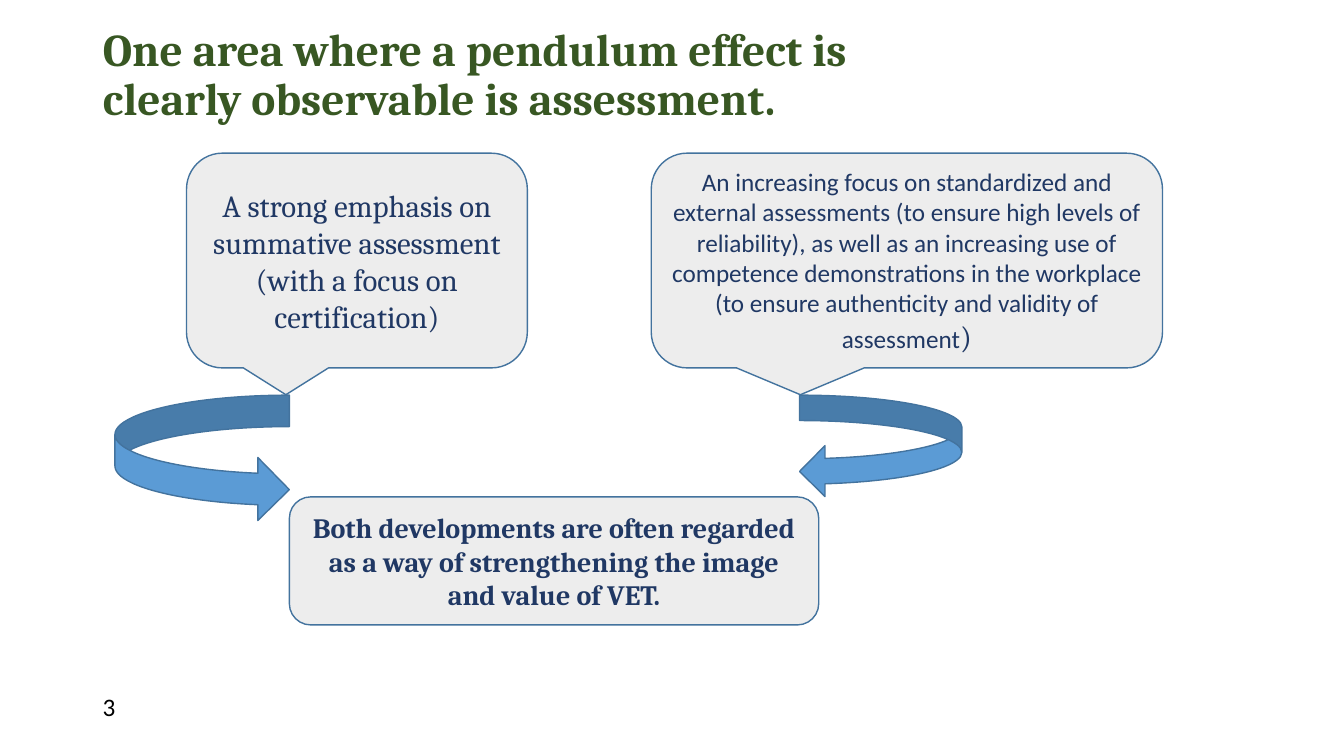
from dataclasses import dataclass

from pptx import Presentation
from pptx.dml.color import RGBColor
from pptx.enum.shapes import MSO_SHAPE
from pptx.enum.text import MSO_ANCHOR, MSO_AUTO_SIZE, PP_ALIGN
from pptx.util import Inches, Pt


@dataclass(frozen=True)
class Theme:
    heading_font: str = "Cambria"
    body_font: str = "Calibri"
    title_color: str = "385723"
    text_color: str = "203864"
    number_color: str = "000000"
    panel_fill: str = "EDEDED"
    arrow_fill: str = "5B9BD5"
    outline: str = "43739E"
    outline_width: float = 1
    title_size: float = 32.4
    large_size: float = 22
    conclusion_size: float = 20
    body_size: float = 18


THEME = Theme()


def add_run(paragraph, text, font_name, size, color, bold=False):
    run = paragraph.add_run()
    run.text = text
    run.font.name = font_name
    run.font.size = Pt(size)
    run.font.bold = bold
    run.font.color.rgb = RGBColor.from_string(color)


def place(shape, left, top, width, height):
    shape.left, shape.top = Inches(left), Inches(top)
    shape.width, shape.height = Inches(width), Inches(height)


def add_title(slide, lines):
    title = slide.shapes.title
    place(title, 0.92, 0.31, 11.5, 0.9)
    frame = title.text_frame
    frame.word_wrap = True
    frame.auto_size = MSO_AUTO_SIZE.NONE
    frame.vertical_anchor = MSO_ANCHOR.MIDDLE
    paragraph = frame.paragraphs[0]
    paragraph.alignment = PP_ALIGN.LEFT
    paragraph.line_spacing = 0.9
    for index, line in enumerate(lines):
        if index:
            paragraph.add_line_break()
        add_run(paragraph, line, THEME.heading_font, THEME.title_size,
                THEME.title_color, bold=True)


def add_outlined(slide, preset, box, fill):
    shape = slide.shapes.add_shape(preset, *map(Inches, box))
    shape.shadow.inherit = False
    shape.fill.solid()
    shape.fill.fore_color.rgb = RGBColor.from_string(fill)
    shape.line.color.rgb = RGBColor.from_string(THEME.outline)
    shape.line.width = Pt(THEME.outline_width)
    return shape


def add_panel(slide, preset, box, runs, bold=False):
    panel = add_outlined(slide, preset, box, THEME.panel_fill)
    frame = panel.text_frame
    frame.word_wrap = True
    frame.vertical_anchor = MSO_ANCHOR.MIDDLE
    paragraph = frame.paragraphs[0]
    paragraph.alignment = PP_ALIGN.CENTER
    for text, font_name, size in runs:
        add_run(paragraph, text, font_name, size, THEME.text_color, bold)


def add_page_number(slide, number):
    page_number = slide.shapes.add_textbox(
        Inches(0.92), Inches(6.81), Inches(0.5), Inches(0.4))
    page_number.text_frame.word_wrap = True
    add_run(page_number.text_frame.paragraphs[0], number,
            THEME.body_font, THEME.body_size, THEME.number_color)


def main():
    presentation = Presentation()
    presentation.slide_width = Inches(13.33)
    presentation.slide_height = Inches(7.5)
    slide = presentation.slides.add_slide(presentation.slide_layouts[5])

    add_title(slide, ["One area where a pendulum effect is",
                      "clearly observable is assessment."])

    # The two developments
    callout = MSO_SHAPE.ROUNDED_RECTANGULAR_CALLOUT
    add_panel(slide, callout, (1.85, 1.52, 3.38, 2.13), [
        ("A strong emphasis on summative assessment (with a focus on "
         "certification)", THEME.heading_font, THEME.large_size)])
    add_panel(slide, callout, (6.46, 1.52, 5.07, 2.13), [
        ("An increasing focus on standardized and external assessments "
         "(to ensure high levels of reliability), as well as an increasing "
         "use of competence demonstrations in the workplace (to ensure "
         "authenticity and validity of assessment",
         THEME.body_font, THEME.body_size),
        (")", THEME.heading_font, THEME.large_size)])

    # Arrows leading to the shared conclusion
    add_outlined(slide, MSO_SHAPE.CURVED_RIGHT_ARROW,
                 (1.14, 3.92, 1.73, 1.25), THEME.arrow_fill)
    add_outlined(slide, MSO_SHAPE.CURVED_LEFT_ARROW,
                 (7.93, 3.92, 1.61, 1.01), THEME.arrow_fill)

    # Conclusion
    add_panel(slide, MSO_SHAPE.ROUNDED_RECTANGLE, (2.87, 4.93, 5.25, 1.27), [
        ("Both developments are often regarded as a way of strengthening "
         "the image and value of VET.",
         THEME.heading_font, THEME.conclusion_size)], bold=True)

    add_page_number(slide, "3")
    presentation.save("out.pptx")


if __name__ == "__main__":
    main()
